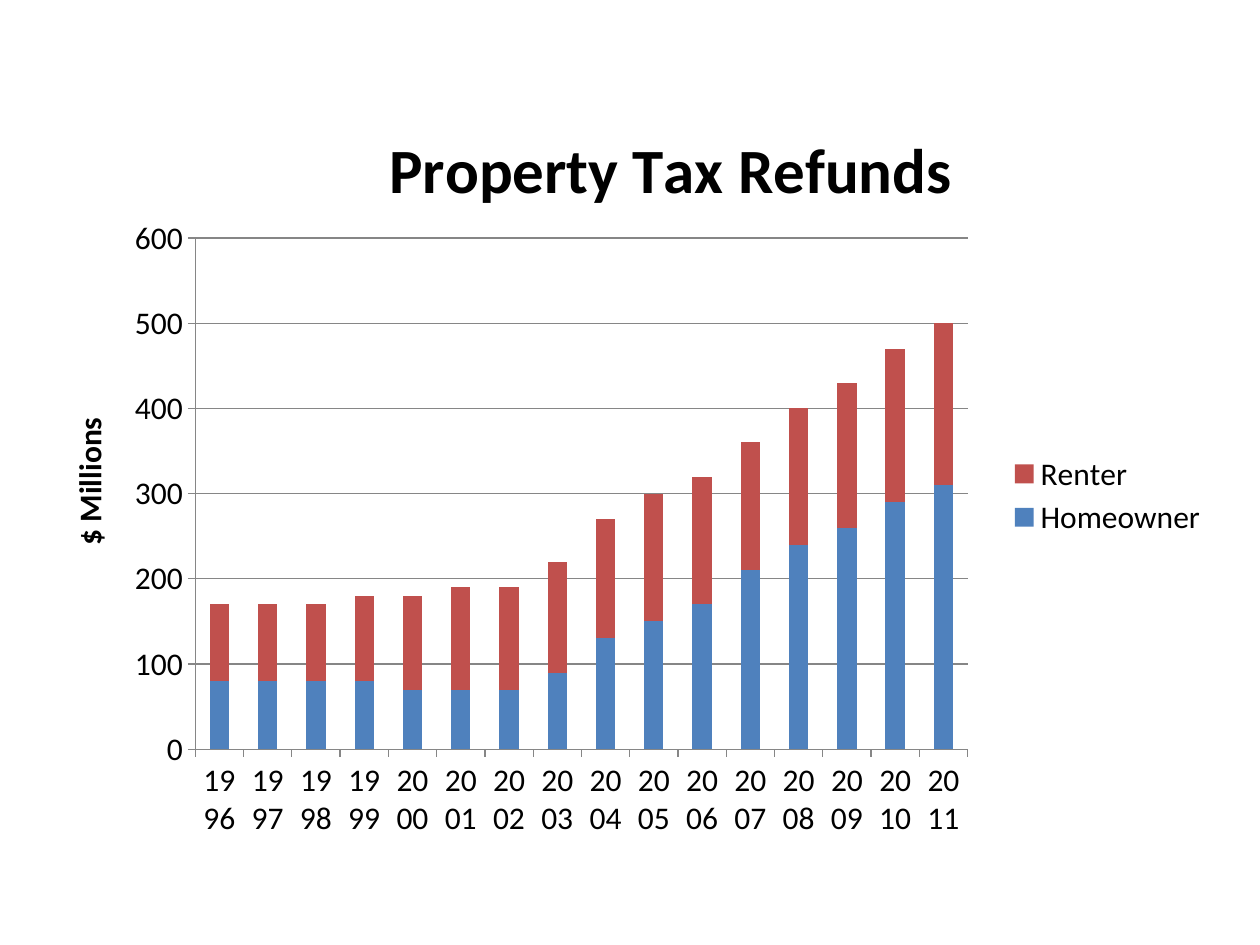
from dataclasses import dataclass

from lxml import etree
from pptx import Presentation
from pptx import util as u
from pptx.chart.data import CategoryChartData
from pptx.dml.color import RGBColor
from pptx.enum import chart as ch
from pptx.oxml.ns import qn

WIDTH, HEIGHT = 10, 7.5
CHART_LEFT, CHART_TOP, CHART_WIDTH, CHART_HEIGHT = 0.25, 0.8, 9.42, 5.85
FONT = "Calibri"
BLACK, GRAY = "000000", "868686"


@dataclass
class Refunds:
    name: str
    color: str
    millions: list[int]


YEARS = [str(year) for year in range(1996, 2012)]
REFUNDS = [
    Refunds("Homeowner", "4F81BD",
            [80, 80, 80, 80, 70, 70, 70, 90, 130, 150, 170, 210, 240, 260, 290, 310]),
    Refunds("Renter", "C0504D",
            [90, 90, 90, 100, 110, 120, 120, 130, 140, 150, 150, 150, 160, 170, 180, 190]),
]


def rgb(color: str) -> RGBColor:
    return RGBColor.from_string(color)


def set_font(font, size: float, bold: bool = False) -> None:
    font.name, font.size, font.bold = FONT, u.Pt(size), bold
    font.color.rgb = rgb(BLACK)


def set_title(title, words: str, size: float, x: float, y: float) -> None:
    tf = title.text_frame
    tf.text = words
    set_font(tf.paragraphs[0].font, size, bold=True)
    set_layout(title._element, 1, x=x, y=y)


def set_layout(parent, index: int, inner: bool = False, **inches: float) -> None:
    """Place a chart part by hand, in inches from the chart's corner."""
    for old in parent.findall(qn("c:layout")):
        parent.remove(old)
    layout = etree.Element(qn("c:layout"))
    manual = etree.SubElement(layout, qn("c:manualLayout"))
    if inner:
        etree.SubElement(manual, qn("c:layoutTarget"), val="inner")
    for key in ("x", "y"):
        etree.SubElement(manual, qn(f"c:{key}Mode"), val="edge")
    for key, length in inches.items():
        whole = CHART_WIDTH if key in ("x", "w") else CHART_HEIGHT
        etree.SubElement(manual, qn(f"c:{key}"), val=str(length / whole))
    parent.insert(index, layout)


def style_axis(axis) -> None:
    axis.format.line.color.rgb = rgb(GRAY)
    axis.major_tick_mark = ch.XL_TICK_MARK.OUTSIDE
    set_font(axis.tick_labels.font, 18)
    # Upright labels may break into two lines
    body = axis._element.find(qn("c:txPr")).find(qn("a:bodyPr"))
    body.set("rot", "0")
    body.set("vert", "horz")


def add_refund_chart(s) -> None:
    data = CategoryChartData()
    data.categories = YEARS
    for refunds in REFUNDS:
        data.add_series(refunds.name, refunds.millions)
    frame = [u.Inches(n) for n in (CHART_LEFT, CHART_TOP, CHART_WIDTH, CHART_HEIGHT)]
    chart = s.shapes.add_chart(ch.XL_CHART_TYPE.COLUMN_STACKED, *frame, data).chart
    set_font(chart.font, 18)

    set_title(chart.chart_title, "Property Tax Refunds", 36, x=2.75, y=0.11)
    set_layout(chart._chartSpace.chart.plotArea, 0, inner=True,
               x=1.3, y=1.09, w=6.13, h=4.06)

    plot = chart.plots[0]
    plot.gap_width, plot.overlap = 150, 100
    plot.vary_by_categories = False
    for series, refunds in zip(plot.series, REFUNDS):
        series.format.fill.solid()
        series.format.fill.fore_color.rgb = rgb(refunds.color)

    for axis in (chart.category_axis, chart.value_axis):
        style_axis(axis)
    values = chart.value_axis
    values.minimum_scale, values.maximum_scale, values.major_unit = 0, 600, 100
    values.major_gridlines.format.line.color.rgb = rgb(GRAY)
    set_title(values.axis_title, "$ Millions", 18, x=0.24, y=2.47)

    chart.has_legend = True
    chart.legend.position = ch.XL_LEGEND_POSITION.RIGHT
    chart.legend.include_in_layout = False
    set_font(chart.legend.font, 18)
    set_layout(chart.legend._element, 1, x=7.69, y=2.77, w=1.7, h=0.73)


def main() -> None:
    prs = Presentation()
    prs.slide_width, prs.slide_height = u.Inches(WIDTH), u.Inches(HEIGHT)
    add_refund_chart(prs.slides.add_slide(prs.slide_layouts[6]))
    prs.save("out.pptx")


if __name__ == "__main__":
    main()
